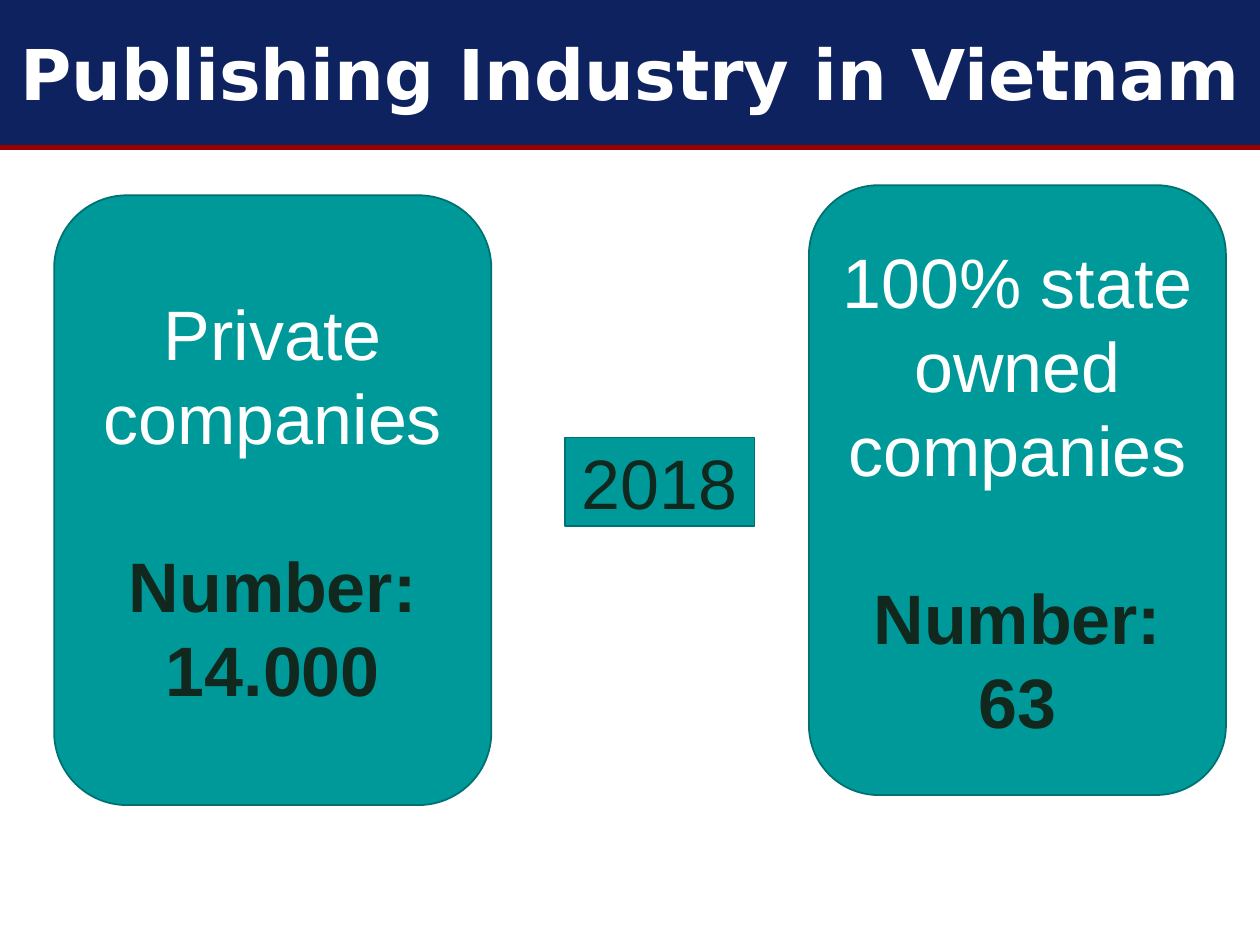
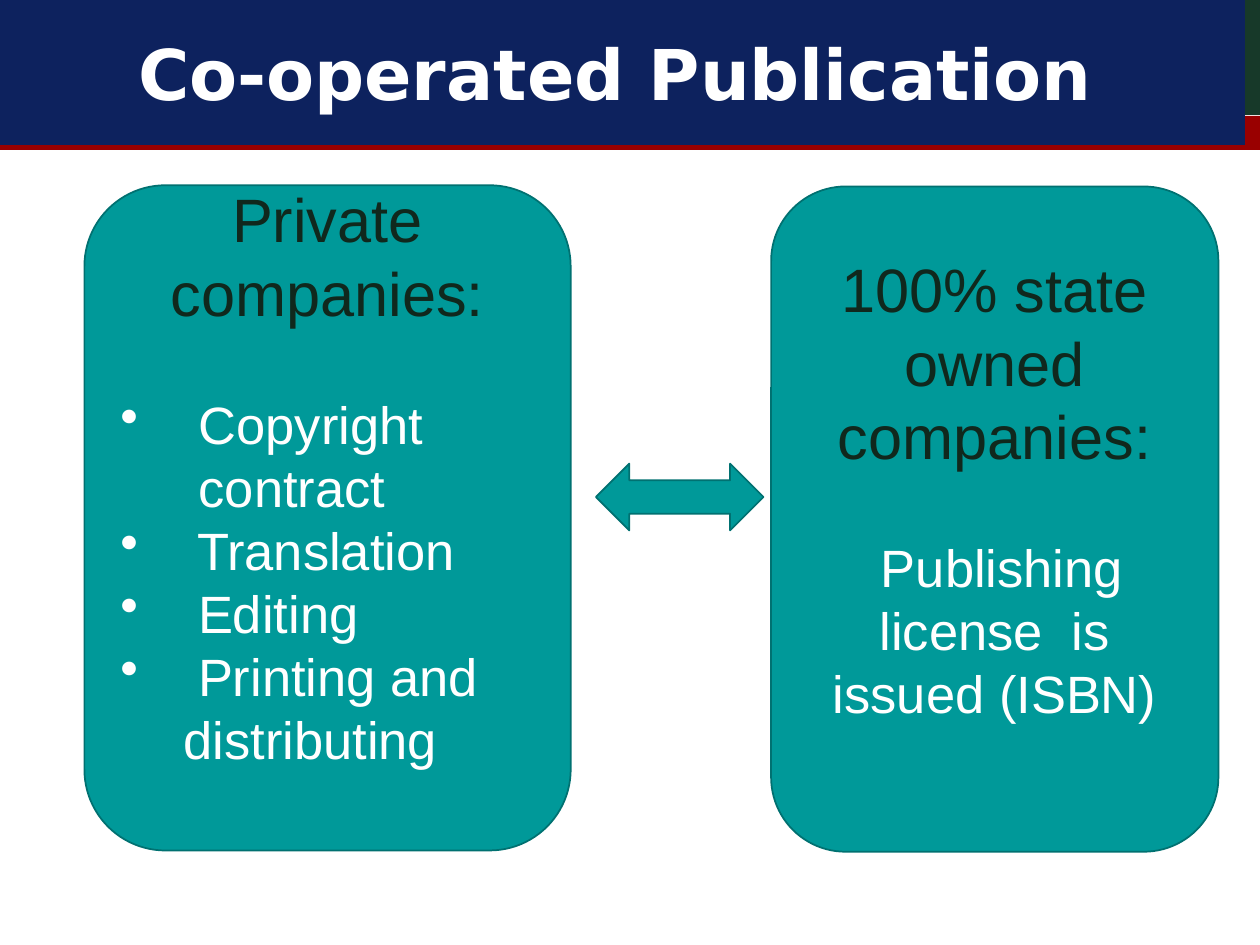
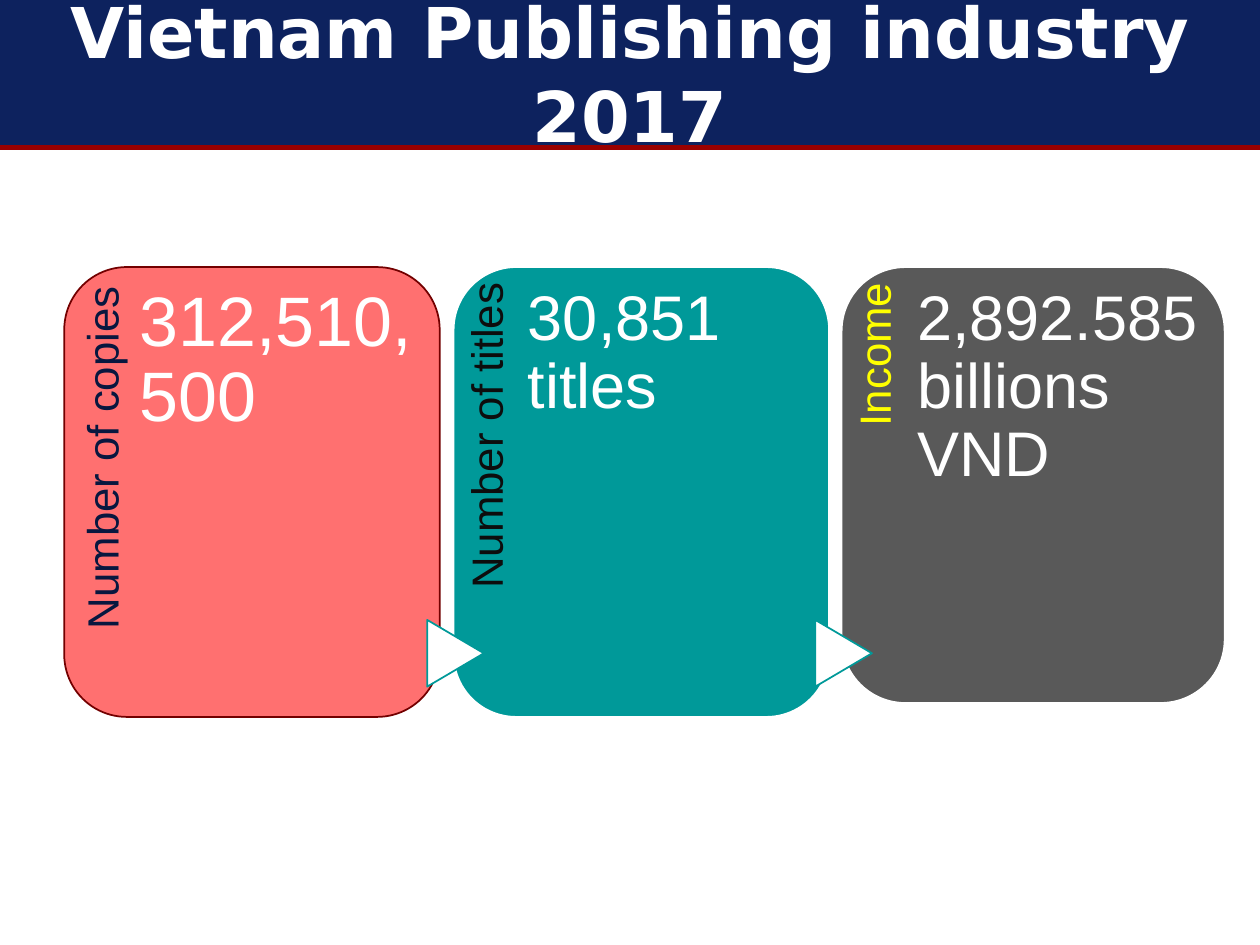
import copy

import pptx
import pptx.dml.color
import pptx.enum.shapes
import pptx.enum.text
import pptx.oxml
import pptx.oxml.ns
import pptx.util

RGB = pptx.dml.color.RGBColor
Inches = pptx.util.Inches
Pt = pptx.util.Pt
SHAPE = pptx.enum.shapes.MSO_SHAPE
ALIGN = pptx.enum.text.PP_ALIGN
ANCHOR = pptx.enum.text.MSO_ANCHOR
qn = pptx.oxml.ns.qn

WHITE = RGB(0xFF, 0xFF, 0xFF)
NAVY = RGB(0x0D, 0x22, 0x5E)
RED = RGB(0x99, 0x00, 0x00)
TEAL = RGB(0x00, 0x99, 0x99)
TEAL_EDGE = RGB(0x00, 0x71, 0x71)
DARK = RGB(0x10, 0x28, 0x1D)
GREEN = RGB(0x17, 0x39, 0x29)
GREEN_MID = RGB(0x20, 0x50, 0x3A)
CORAL = RGB(0xFF, 0x70, 0x70)
CORAL_EDGE = RGB(0x73, 0x00, 0x00)
GREY = RGB(0x59, 0x59, 0x59)
LABEL_NAVY = RGB(0x08, 0x17, 0x3F)
LABEL_BLACK = RGB(0x0D, 0x0D, 0x0D)
YELLOW = RGB(0xFF, 0xFF, 0x00)
BODY_FONT = "Arial"
TITLE_FONT = "DejaVu Sans"
LEADING = 1.2


def add_shape(s, kind, at, fill=TEAL, line=TEAL_EDGE):
    """Add a flat preset shape; a line of None leaves it without outline."""
    sp = s.shapes.add_shape(kind, *map(Inches, at))
    sp.shadow.inherit = False
    sp.fill.solid()
    sp.fill.fore_color.rgb = fill
    if line is None:
        sp.line.fill.background()
    else:
        sp.line.color.rgb = line
        sp.line.width = Pt(1)
    return sp


def add_paragraph(tf, text, size, color, bold=False, font=BODY_FONT,
                  align=ALIGN.CENTER, leading=LEADING, gap=0):
    """Append a one-style paragraph, using the frame's first one if empty."""
    p = tf.paragraphs[0]
    if p.runs:
        p = tf.add_paragraph()
    p.alignment = align
    p.line_spacing = Pt(round(size * leading, 1))
    p.space_before = Pt(gap)
    for i, part in enumerate(text.split("\n")):
        if i:
            p.add_line_break()
        r = p.add_run()
        r.text = part
        r.font.name = font
        r.font.size = Pt(size)
        r.font.bold = bold
        r.font.color.rgb = color
    return p


def add_bullet(tf, text, size, color, hang):
    """Append a bulleted paragraph with a hanging indent."""
    p = add_paragraph(tf, text, size, color, align=ALIGN.LEFT)
    pPr = p._p.get_or_add_pPr()
    pPr.set("marL", str(Inches(hang)))
    pPr.set("indent", str(-Inches(hang)))
    pPr.append(pptx.oxml.parse_xml(
        '<a:buChar xmlns:a="http://schemas.openxmlformats.org/drawingml/2006/main" char="•"/>'))
    return p


def add_text(s, at, margins, text, size, color, align=ALIGN.LEFT, rotation=0):
    """Add a wrapped text box with tight line spacing."""
    sp = s.shapes.add_textbox(*map(Inches, at))
    sp.rotation = rotation
    tf = sp.text_frame
    tf.word_wrap = True
    tf.margin_left, tf.margin_top, tf.margin_right, tf.margin_bottom = map(Inches, margins)
    add_paragraph(tf, text, size, color, align=align, leading=0.9 * LEADING)


def add_slide(prs, title, left=0):
    """Add a slide whose title placeholder is a navy band."""
    s = prs.slides.add_slide(prs.slide_layouts[5])
    sp = s.shapes.title
    sp.left, sp.top, sp.width, sp.height = map(Inches, (left, 0, 10, 1.15))
    sp.fill.solid()
    sp.fill.fore_color.rgb = NAVY
    tf = sp.text_frame
    tf.word_wrap = True
    tf.auto_size = pptx.enum.text.MSO_AUTO_SIZE.NONE
    tf.vertical_anchor = ANCHOR.MIDDLE
    add_paragraph(tf, title, 40, WHITE, bold=True, font=TITLE_FONT)
    return s


def move_to_master(prs, bands):
    """Move shapes to the back of the slide master."""
    for i, sp in enumerate(bands):
        sp.element.nvSpPr.cNvPr.set("id", str(101 + i))
        prs.slide_master.shapes.element.insert(2 + i, sp.element)


def add_master_bands(prs, s):
    """Give the master its green gradient band and red band."""
    green = add_shape(s, SHAPE.RECTANGLE, (0, 0, 10, 0.91), line=None)
    green.fill.gradient()
    green.fill.gradient_angle = 0
    for stop, position in zip(green.fill.gradient_stops, (0, 1)):
        stop.color.rgb = GREEN
        stop.position = position
    first = green.element.spPr.find(".//" + qn("a:gs"))
    first.addnext(copy.deepcopy(first))
    middle = green.fill.gradient_stops[1]
    middle.color.rgb = GREEN_MID
    middle.position = 0.5
    red = add_shape(s, SHAPE.RECTANGLE, (0, 0.92, 10, 0.27), RED, None)
    move_to_master(prs, (green, red))


def add_card(s, at, fill=TEAL, line=TEAL_EDGE, space_below=0):
    """Add a rounded card and return its text frame."""
    tf = add_shape(s, SHAPE.ROUNDED_RECTANGLE, at, fill, line).text_frame
    tf.word_wrap = True
    tf.vertical_anchor = ANCHOR.MIDDLE
    tf.margin_bottom = Inches(0.05 + space_below)
    return tf


def add_figure_card(s, at, colors, label, label_at, label_color, value, value_at, size):
    """Add a card with a sideways label and a large value."""
    add_card(s, at, *colors)
    add_text(s, label_at, (0, 0.09, 0.12, 0), label, 25, label_color, ALIGN.RIGHT, 270)
    add_text(s, value_at, (0, 0.14, 0, 0), value, size, WHITE)


def build_industry(prs):
    """Build the slide that counts private and state companies."""
    s = add_slide(prs, "Publishing Industry in Vietnam")
    add_master_bands(prs, s)
    cards = (
        ((0.43, 1.55, 3.47, 4.84), "Private companies", ("Number:", "14.000")),
        ((6.42, 1.47, 3.31, 4.84), "100% state owned companies", ("Number: 63",)),
    )
    for at, name, numbers in cards:
        tf = add_card(s, at)
        add_paragraph(tf, name, 40, WHITE)
        for i, number in enumerate(numbers):
            add_paragraph(tf, number, 40, DARK, bold=True, gap=0 if i else 48)
    year = add_shape(s, SHAPE.MATH_MINUS, (4.21, 2.33, 2.05, 2.99))
    year.text_frame.word_wrap = True
    add_paragraph(year.text_frame, "2018", 40, DARK)


def build_cooperation(prs):
    """Build the slide on the roles of both kinds of company."""
    s = add_slide(prs, "Co-operated Publication", left=-0.12)
    tf = add_card(s, (0.67, 1.47, 3.86, 5.28), space_below=0.67)
    add_paragraph(tf, "Private companies:", 35, DARK)
    add_bullet(tf, "Copyright contract", 30, WHITE, 0.62).space_before = Pt(36)
    for task in (" Translation", " Editing", " Printing and distributing"):
        add_bullet(tf, task, 30, WHITE, 0.5)
    tf = add_card(s, (6.12, 1.48, 3.55, 5.28), space_below=0.5)
    add_paragraph(tf, "100% state owned companies:", 35, DARK)
    add_paragraph(tf, " Publishing license  is issued (ISBN)", 30, WHITE, gap=36)
    add_shape(s, SHAPE.LEFT_RIGHT_ARROW, (4.73, 3.68, 1.33, 0.53))


def build_figures(prs):
    """Build the slide with the three figures for the year."""
    s = add_slide(prs, "Vietnam Publishing industry\n2017")
    add_figure_card(s, (0.51, 2.12, 2.98, 3.57), (CORAL, CORAL_EDGE),
                    "Number of copies", (-0.62, 3.32, 2.87, 0.54), LABEL_NAVY,
                    "312,510,500", (1.11, 2.12, 2.22, 3.57), 40)
    add_figure_card(s, (3.6, 2.12, 2.98, 3.57), (TEAL, WHITE),
                    "Number of titles", (2.43, 3.29, 2.93, 0.6), LABEL_BLACK,
                    "30,851 titles", (4.19, 2.12, 2.22, 3.57), 36)
    add_figure_card(s, (6.68, 2.12, 3.04, 3.46), (GREY, WHITE),
                    "Income", (5.56, 3.24, 2.84, 0.61), YELLOW,
                    "2,892.585 billions VND", (7.28, 2.12, 2.27, 3.46), 36)
    for left in (3.35, 6.43):
        arrow = add_shape(s, SHAPE.FLOWCHART_EXTRACT, (left, 4.96, 0.53, 0.45), WHITE, TEAL)
        arrow.rotation = 90


def main():
    """Build and save the presentation."""
    prs = pptx.Presentation()
    prs.slide_width, prs.slide_height = Inches(10), Inches(7.5)
    build_industry(prs)
    build_cooperation(prs)
    build_figures(prs)
    prs.save("out.pptx")


if __name__ == "__main__":
    main()
